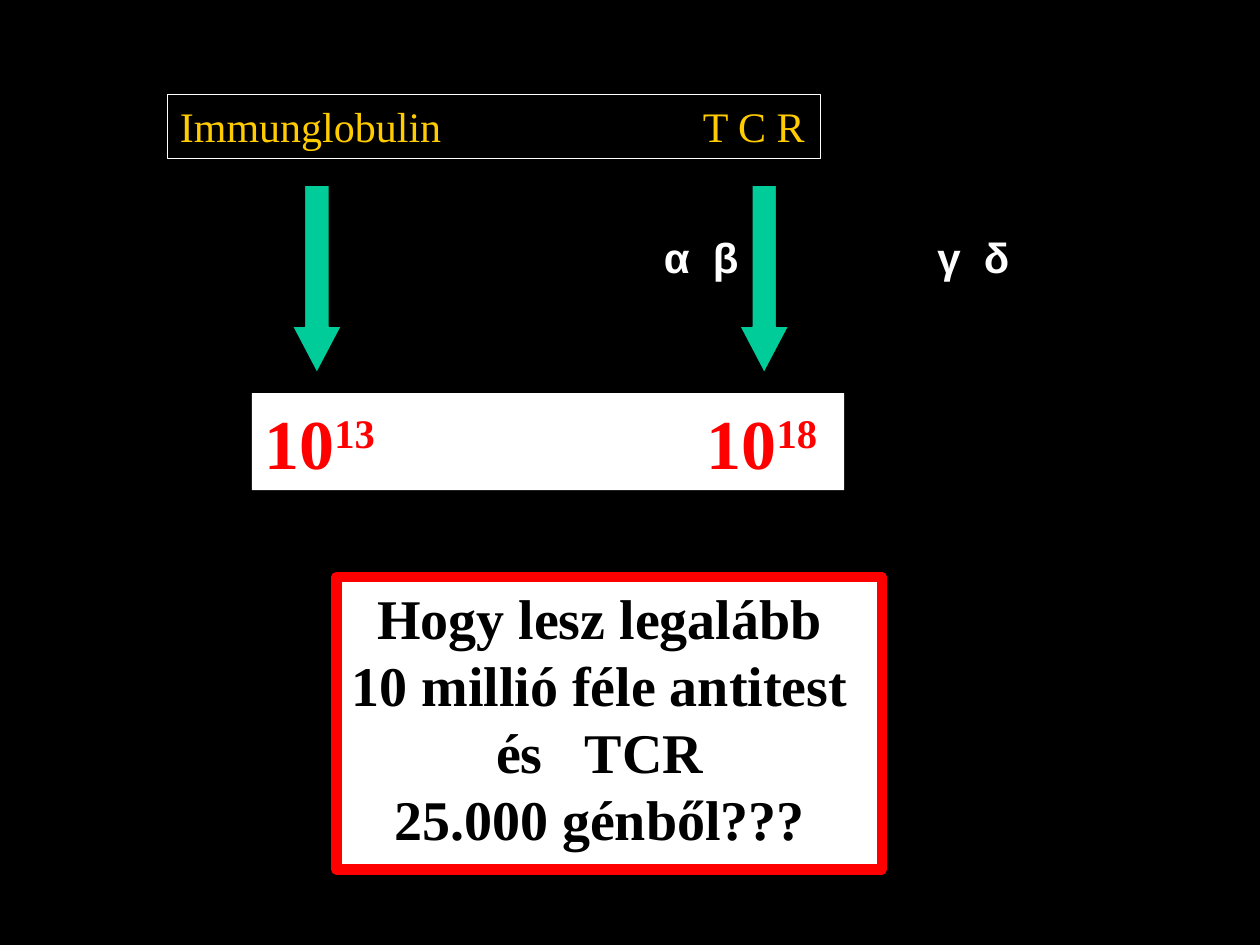
from dataclasses import dataclass

from lxml import etree
from pptx import Presentation
from pptx.dml.color import RGBColor
from pptx.enum import shapes, text
from pptx.oxml import ns
from pptx.util import Inches, Pt


@dataclass(frozen=True)
class Theme:
    """Colours, fonts and type sizes of the slide."""
    black: str = "000000"
    white: str = "FFFFFF"
    yellow: str = "FFCC00"
    red: str = "FF0000"
    green: str = "00CC99"
    serif: str = "Times New Roman"
    sans: str = "Arial"
    label: int = 24
    question: int = 32
    number: int = 40


THEME = Theme()


def rgb(value):
    """Turn a hex string into a colour."""
    return RGBColor.from_string(value)


def add_box(s, kind, box, fill=None, line=None, width=0.75):
    """Add a preset shape with the given fill and outline."""
    sp = s.shapes.add_shape(kind, *map(Inches, box))
    sp.shadow.inherit = False
    if fill:
        sp.fill.solid()
        sp.fill.fore_color.rgb = rgb(fill)
    else:
        sp.fill.background()
    if line:
        sp.line.color.rgb = rgb(line)
        sp.line.width = Pt(width)
    else:
        sp.line.fill.background()
    return sp


def set_frame(sp, left=0.1, right=0.0):
    """Prepare a wrapped, top-anchored text frame."""
    tf = sp.text_frame
    tf.word_wrap = True
    tf.auto_size = text.MSO_AUTO_SIZE.NONE
    tf.vertical_anchor = text.MSO_ANCHOR.TOP
    tf.margin_left, tf.margin_right = Inches(left), Inches(right)
    return tf


def format_paragraph(p, font, size, color, bold=True, align=text.PP_ALIGN.LEFT):
    """Set the font and alignment of a paragraph."""
    p.alignment = align
    p.font.name, p.font.size, p.font.bold = font, Pt(size), bold
    p.font.color.rgb = rgb(color)


def set_tabs(p, stops):
    """Give a paragraph left tab stops, in inches from its text edge."""
    tabs = etree.Element(ns.qn("a:tabLst"))
    for stop in stops:
        etree.SubElement(tabs, ns.qn("a:tab"), pos=str(Inches(stop)), algn="l")
    p._p.get_or_add_pPr().insert(0, tabs)


def add_run(p, words, **attributes):
    """Add a run with optional character attributes."""
    r = p.add_run()
    r.text = words
    for name, value in attributes.items():
        r._r.get_or_add_rPr().set(name, value)


def add_chains(s, box):
    """Write the receptor chain letters."""
    sp = s.shapes.add_textbox(*map(Inches, box))
    p = set_frame(sp).paragraphs[0]
    add_run(p, "\tα\tβ\tγ\tδ")
    format_paragraph(p, THEME.sans, THEME.label, THEME.white)
    set_tabs(p, (3.6, 3.99, 5.77, 6.14))


def add_header(s, box):
    """Draw the outlined row of receptor names."""
    sp = add_box(s, shapes.MSO_SHAPE.RECTANGLE, box, line=THEME.white)
    p = set_frame(sp).paragraphs[0]
    add_run(p, "Immunglobulin\tT C R")
    format_paragraph(p, THEME.serif, THEME.label, THEME.yellow, bold=False)
    set_tabs(p, (4.15,))


def add_numbers(s, box):
    """Draw the row of diversity figures."""
    sp = add_box(s, shapes.MSO_SHAPE.RECTANGLE, box, fill=THEME.white)
    p = set_frame(sp).paragraphs[0]
    for base, power in (("10", "13"), ("\t10", "18")):
        add_run(p, base)
        add_run(p, power, baseline="30000")
    format_paragraph(p, THEME.serif, THEME.number, THEME.red)
    set_tabs(p, (3.51,))


def add_question(s, box):
    """Draw the framed closing question."""
    sp = add_box(s, shapes.MSO_SHAPE.RECTANGLE, box, THEME.white, THEME.red, 6)
    tf = set_frame(sp, 0.05, 0.2)
    lines = (("Hogy lesz legalább",), ("10 millió féle antitest",),
             ("és", "TCR"), ("25.000 génből???",))
    for i, words in enumerate(lines):
        p = tf.add_paragraph() if i else tf.paragraphs[0]
        add_run(p, words[0])
        for word in words[1:]:
            add_run(p, " ", spc="1600")
            add_run(p, word)
        format_paragraph(p, THEME.serif, THEME.question, THEME.black,
                         align=text.PP_ALIGN.CENTER)


def add_arrow(s, box):
    """Draw a downward block arrow."""
    sp = add_box(s, shapes.MSO_SHAPE.DOWN_ARROW, box, THEME.green, THEME.black)
    sp.adjustments[0], sp.adjustments[1] = 0.5, 0.95


def main():
    """Build and save the slide."""
    prs = Presentation()
    prs.slide_width, prs.slide_height = Inches(10), Inches(7.5)
    s = prs.slides.add_slide(prs.slide_layouts[6])
    s.background.fill.solid()
    s.background.fill.fore_color.rgb = rgb(THEME.black)
    add_chains(s, (1.57, 1.79, 7.65, 0.5))
    add_header(s, (1.33, 0.75, 5.18, 0.51))
    add_numbers(s, (2, 3.12, 4.7, 0.77))
    add_question(s, (2.67, 4.58, 4.33, 2.32))
    for left in (2.32, 5.87):
        add_arrow(s, (left, 1.47, 0.39, 1.49))
    prs.save("out.pptx")


if __name__ == "__main__":
    main()
